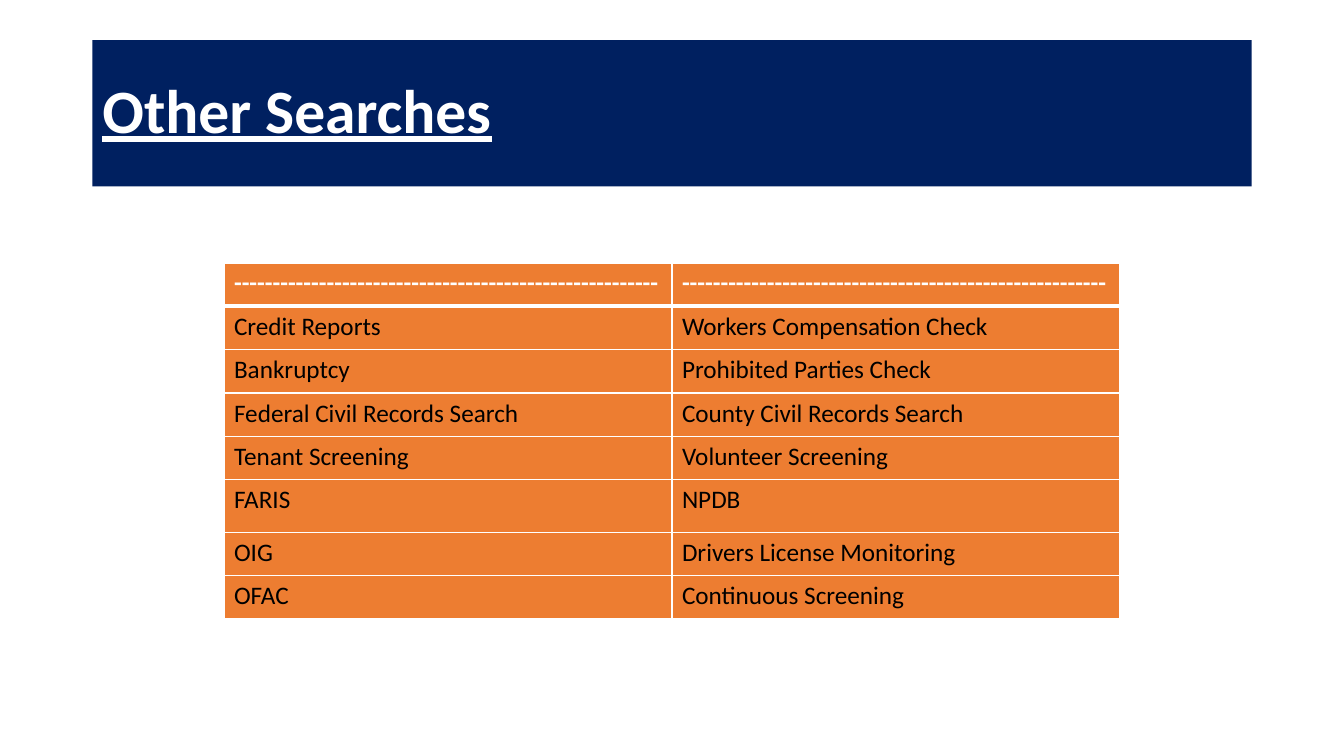
from dataclasses import dataclass

from lxml.etree import SubElement
from pptx import Presentation
from pptx.dml.color import RGBColor
from pptx.enum.text import MSO_ANCHOR, MSO_AUTO_SIZE, PP_ALIGN
from pptx.oxml.ns import qn
from pptx.table import _Cell
from pptx.text.text import TextFrame
from pptx.util import Pt

COLORS = {
    "navy": "002060",
    "orange": "ED7D31",
    "white": "FFFFFF",
    "black": "000000",
}
FONT = "Calibri"
DASHES = "-" * 55


@dataclass
class SearchRow:
    left: str
    right: str
    height: float = 31
    header: bool = False


ROWS = [
    SearchRow(DASHES, DASHES, header=True),
    SearchRow("Credit Reports", "Workers Compensation Check"),
    SearchRow("Bankruptcy", "Prohibited Parties Check"),
    SearchRow("Federal Civil Records Search", "County Civil Records Search"),
    SearchRow("Tenant Screening", "Volunteer Screening"),
    SearchRow("FARIS", "NPDB", height=37.5),
    SearchRow("OIG", "Drivers License Monitoring"),
    SearchRow("OFAC", "Continuous Screening"),
]


def write_text(frame: TextFrame, text: str, *, size: float, color: str,
               bold: bool = False, underline: bool = False,
               line_spacing: float = 1.0) -> None:
    paragraph = frame.paragraphs[0]
    paragraph.alignment = PP_ALIGN.LEFT
    paragraph.line_spacing = line_spacing
    run = paragraph.add_run()
    run.text = text
    run.font.name = FONT
    run.font.size = Pt(size)
    run.font.bold = bold
    run.font.underline = underline
    run.font.color.rgb = RGBColor.from_string(COLORS[color])


def set_borders(cell: _Cell, widths: dict[str, float]) -> None:
    properties = cell._tc.get_or_add_tcPr()
    for position, (side, width) in enumerate(widths.items()):
        line = properties.makeelement(qn(f"a:{side}"), {"w": str(Pt(width))})
        fill = SubElement(line, qn("a:solidFill"))
        SubElement(fill, qn("a:srgbClr"), val=COLORS["white"])
        properties.insert(position, line)


def add_title(slide) -> None:
    title = slide.shapes.title
    title.left, title.top, title.width, title.height = Pt(66), Pt(28.75), Pt(828), Pt(104.4)
    title.fill.solid()
    title.fill.fore_color.rgb = RGBColor.from_string(COLORS["navy"])
    title.text_frame.auto_size = MSO_AUTO_SIZE.NONE
    title.text_frame.vertical_anchor = MSO_ANCHOR.MIDDLE
    write_text(title.text_frame, "Other Searches", size=44, color="white",
               bold=True, underline=True, line_spacing=0.9)


def add_search_table(slide, rows: list[SearchRow]) -> None:
    height = sum(row.height for row in rows)
    table = slide.shapes.add_table(len(rows), 2, Pt(160), Pt(187.8), Pt(640), Pt(height)).table
    for index, row in enumerate(rows):
        table.rows[index].height = Pt(row.height)
        # The rule under the header row is thicker than the others
        top = 3 if index == 1 else 1
        bottom = 3 if row.header else 1
        for column, text in enumerate((row.left, row.right)):
            cell = table.cell(index, column)
            cell.fill.solid()
            cell.fill.fore_color.rgb = RGBColor.from_string(COLORS["orange"])
            set_borders(cell, {"lnL": 1, "lnR": 1, "lnT": top, "lnB": bottom})
            write_text(cell.text_frame, text, size=18, bold=row.header,
                       color="white" if row.header else "black")


def main() -> None:
    presentation = Presentation()
    presentation.slide_width, presentation.slide_height = Pt(960), Pt(540)
    title_only = presentation.slide_layouts[5]
    slide = presentation.slides.add_slide(title_only)

    # Title band
    add_title(slide)
    # Two-column list of searches
    add_search_table(slide, ROWS)

    presentation.save("out.pptx")


if __name__ == "__main__":
    main()
